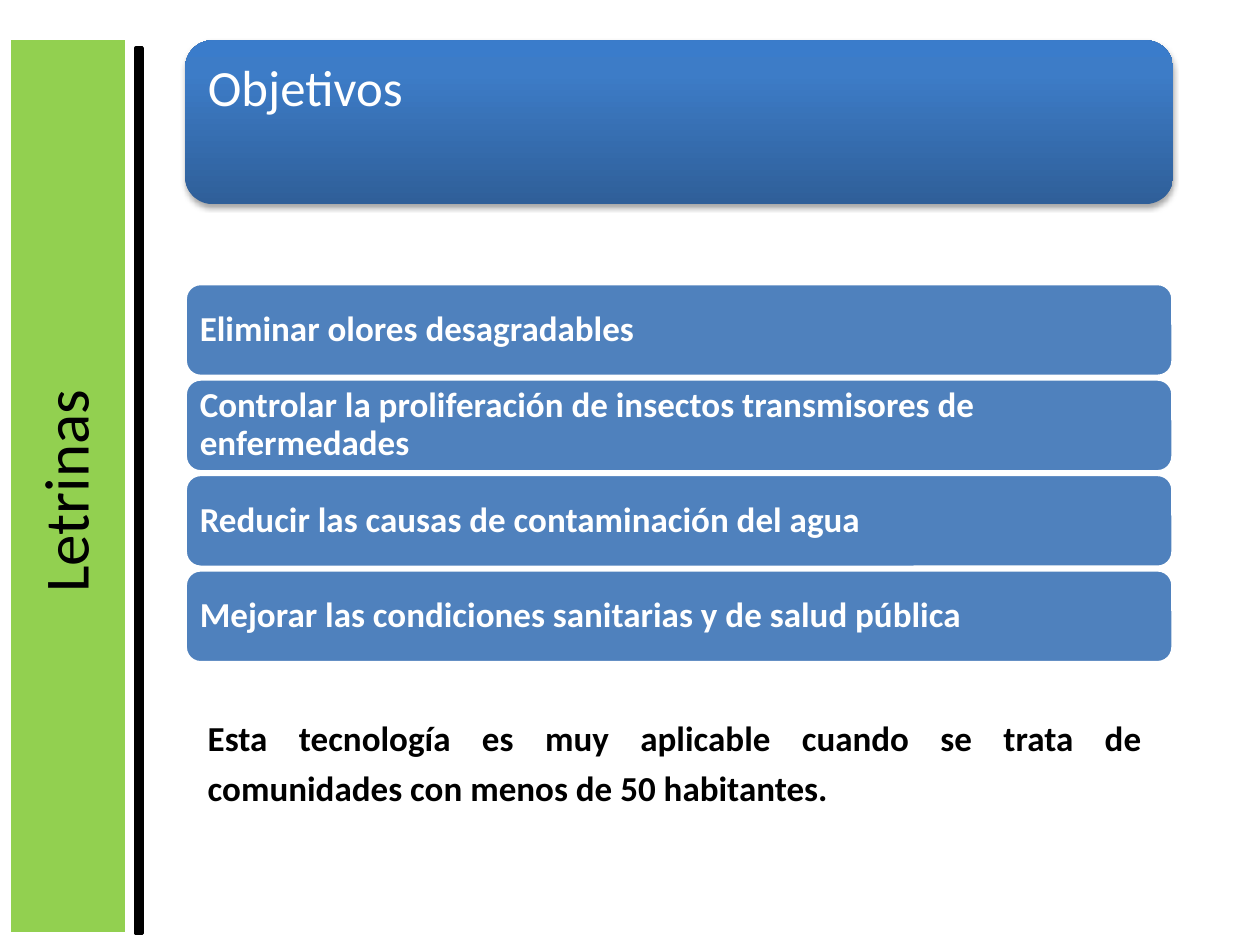
import pptx
import pptx.util
import pptx.oxml
from pptx.dml.color import RGBColor
from pptx.enum.shapes import MSO_SHAPE
from pptx.enum.text import MSO_ANCHOR, PP_ALIGN
from pptx.util import Inches

WHITE = RGBColor(0xFF, 0xFF, 0xFF)
BLACK = RGBColor(0, 0, 0)
GREEN = RGBColor(0x92, 0xD0, 0x50)
BLUE = RGBColor(0x4F, 0x81, 0xBD)
DARK = RGBColor(0x2F, 0x5F, 0x99)
MID = RGBColor(0x3D, 0x7C, 0xC7)
LIGHT = RGBColor(0x3A, 0x7C, 0xCB)

NS = 'xmlns:a="http://schemas.openxmlformats.org/drawingml/2006/main"'
GOALS = [
    "Eliminar olores desagradables",
    "Controlar la proliferación de insectos transmisores de enfermedades",
    "Reducir las causas de contaminación del agua",
    "Mejorar las condiciones sanitarias y de salud pública",
]


def add_block(slide, kind, box, fill, line=None):
    """Add a preset shape; box is left, top, width, height in inches."""
    shape = slide.shapes.add_shape(kind, *map(Inches, box))
    shape.shadow.inherit = False
    shape.fill.solid()
    shape.fill.fore_color.rgb = fill
    if line is None:
        shape.line.fill.background()
    else:
        shape.line.color.rgb = line
        shape.line.width = pptx.util.Pt(2)
    return shape


def set_text(shape, text, size, color, bold=False, align=PP_ALIGN.LEFT,
             space=1.0, anchor=MSO_ANCHOR.TOP, inset=None):
    frame = shape.text_frame
    frame.text = text
    frame.word_wrap = True
    frame.vertical_anchor = anchor
    if inset is not None:
        frame.margin_left = frame.margin_right = Inches(inset)
        frame.margin_top = frame.margin_bottom = Inches(inset)
    para = frame.paragraphs[0]
    para.alignment = align
    para.line_spacing = space
    para.font.name = "Calibri"
    para.font.size = pptx.util.Pt(size)
    para.font.bold = bold
    para.font.color.rgb = color


def add_side(slide, left, top, width, height):
    """Green band with a black rule on its right and a vertical label."""
    band = 0.94
    rule = 0.05
    add_block(slide, MSO_SHAPE.RECTANGLE, (left, top, band, height), GREEN, WHITE)
    add_block(slide, MSO_SHAPE.RECTANGLE,
              (left + width - rule, top + 0.08, rule, height - 0.08), BLACK, BLACK)

    long, deep = 6.67, 1.31
    mid_x, mid_y = left + 0.74, top + 3.6
    label = slide.shapes.add_textbox(
        Inches(mid_x - long / 2), Inches(mid_y - deep / 2), Inches(long), Inches(deep))
    label.rotation = 270
    set_text(label, "Letrinas", 36, BLACK, align=PP_ALIGN.CENTER)


def shade(shape):
    """Give the shape a vertical three-stop gradient and a soft shadow."""
    shape.fill.gradient()
    shape.fill.gradient_angle = 90
    stops = shape._element.spPr.find(".//{*}gsLst")
    for stop in list(stops):
        stops.remove(stop)
    for pos, color in ((0, DARK), (80, MID), (100, LIGHT)):
        stops.append(pptx.oxml.parse_xml(
            f'<a:gs {NS} pos="{pos * 1000}"><a:srgbClr val="{color}"/></a:gs>'))
    shape._element.spPr.find("{*}effectLst").append(pptx.oxml.parse_xml(
        f'<a:outerShdw {NS} blurRad="40000" dist="23000" dir="5400000" rotWithShape="0">'
        '<a:srgbClr val="000000"><a:alpha val="35000"/></a:srgbClr></a:outerShdw>'))


def add_head(slide, left, top, width, height):
    """Shaded banner with the slide title on it."""
    shade(add_block(slide, MSO_SHAPE.ROUNDED_RECTANGLE, (left, top, width, height), BLUE))
    title = slide.shapes.title
    pad = 0.06
    title.left, title.top = Inches(left + pad), Inches(top + pad)
    title.width, title.height = Inches(width - 2 * pad), Inches(height - 2 * pad)
    set_text(title, "Objetivos", 29, WHITE, space=0.9, inset=0.12)
    slide.shapes._spTree.append(title._element)  # bring in front of the banner


def add_goals(slide, left, top, width, height):
    gap = 0.02
    tall = (height - gap * (len(GOALS) - 1)) / len(GOALS)
    for i, goal in enumerate(GOALS):
        bar = add_block(slide, MSO_SHAPE.ROUNDED_RECTANGLE,
                        (left, top + i * (tall + gap), width, tall), BLUE, WHITE)
        set_text(bar, goal, 20, WHITE, bold=True, space=0.9,
                 anchor=MSO_ANCHOR.MIDDLE, inset=0.08)


def add_note(slide, left, top, width, height):
    note = slide.shapes.add_textbox(*map(Inches, (left, top, width, height)))
    set_text(note, "Esta tecnología es muy aplicable cuando se trata de "
             "comunidades con menos de 50 habitantes.", 20, BLACK,
             bold=True, align=PP_ALIGN.JUSTIFY, space=1.2)


def main():
    deck = pptx.Presentation()
    deck.slide_width, deck.slide_height = Inches(10), Inches(7.5)
    slide = deck.slides.add_slide(deck.slide_layouts[5])
    add_side(slide, 0.07, 0.3, 1.06, 7.11)
    add_head(slide, 1.47, 0.32, 7.84, 1.3)
    add_goals(slide, 1.47, 2.25, 7.84, 3.01)
    add_note(slide, 1.55, 5.57, 7.61, 0.91)
    deck.save("out.pptx")


if __name__ == "__main__":
    main()
